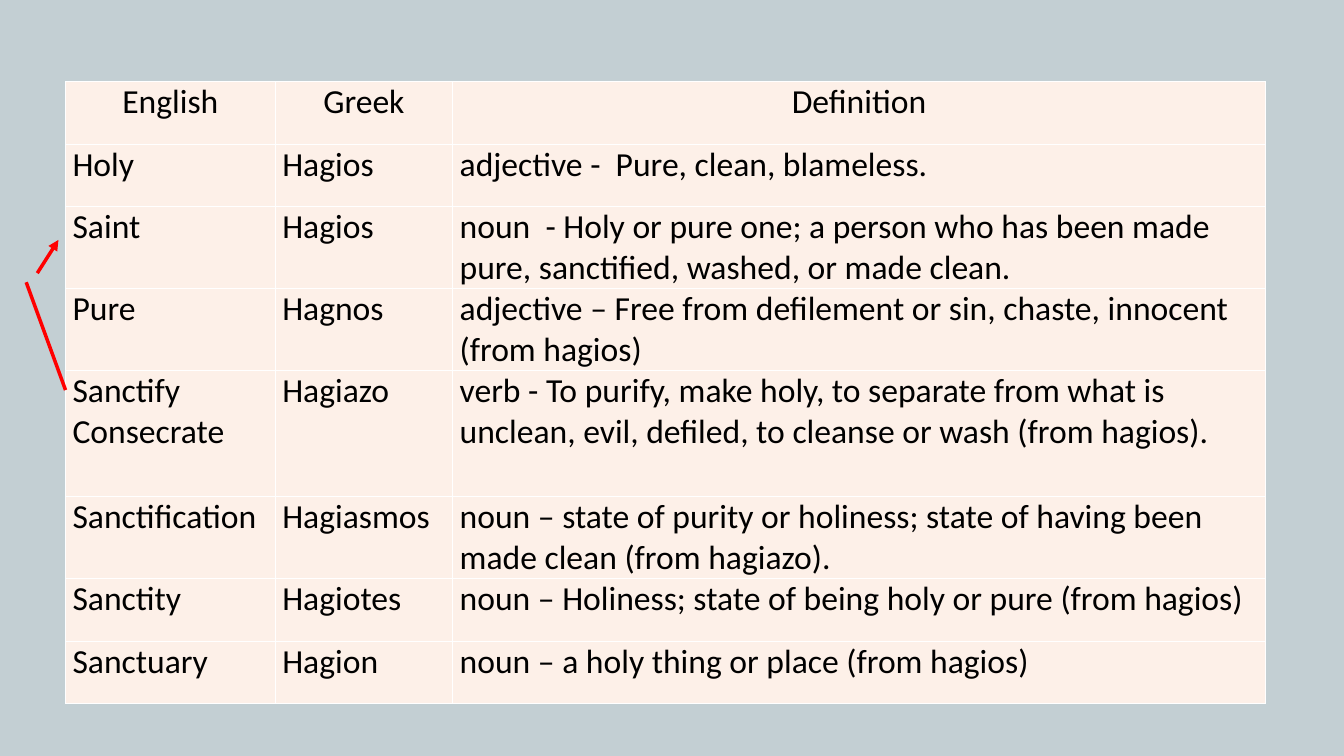
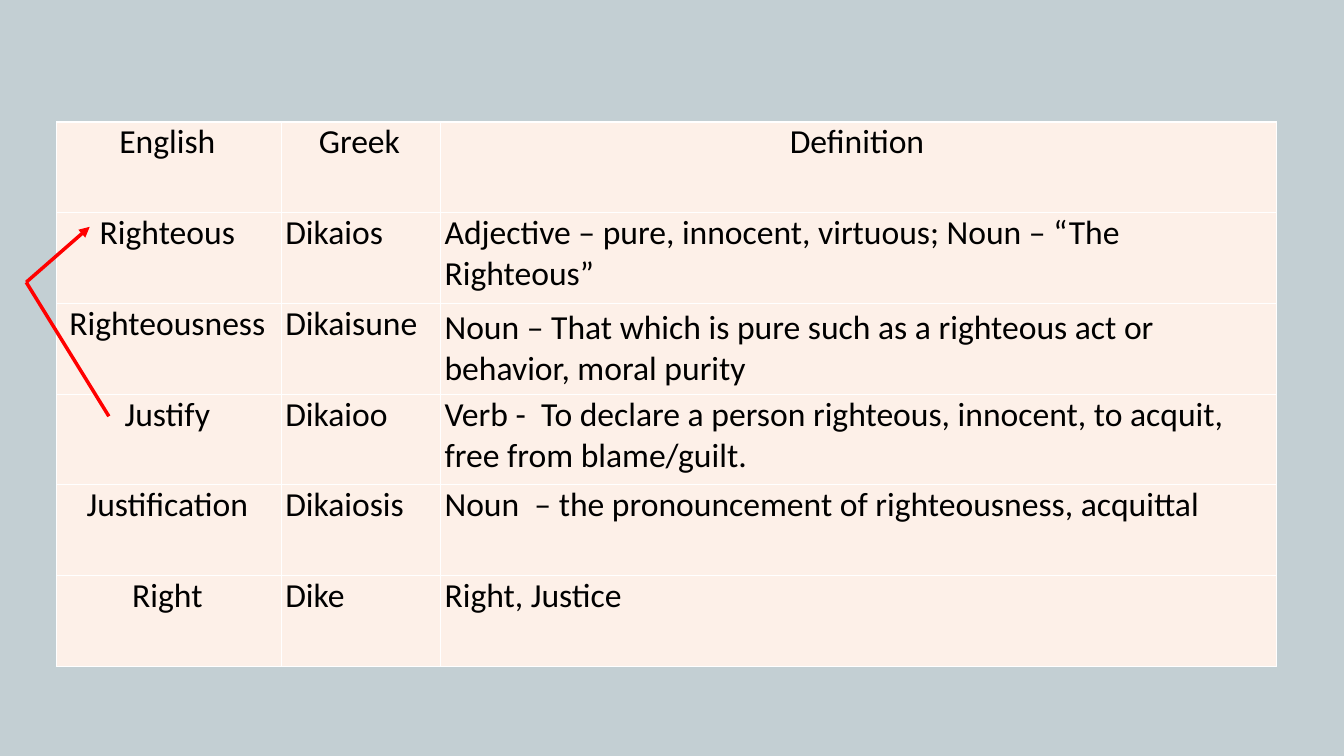
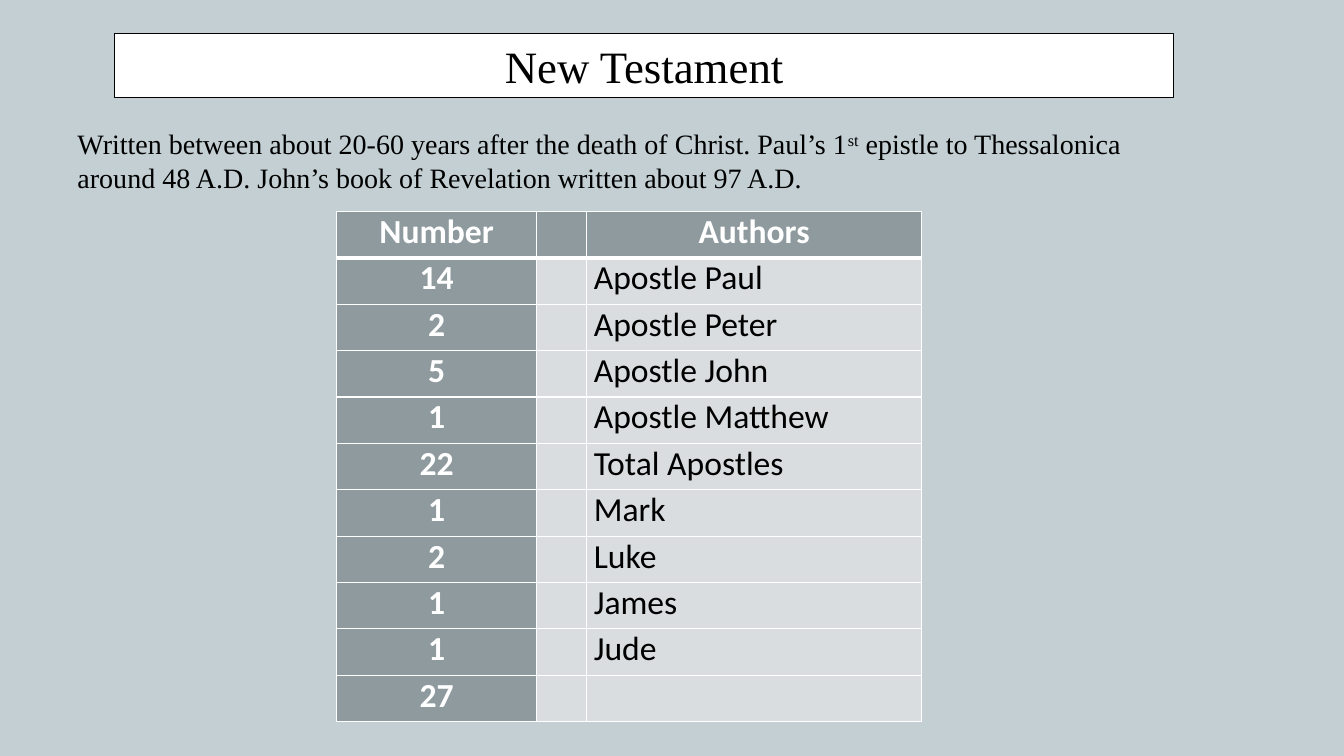
import lxml.etree
import pptx
import pptx.dml.color
import pptx.enum.shapes
import pptx.enum.text
import pptx.oxml.ns
import pptx.util

SCALE = 9144  # EMU in one px, 100 px to the inch
COLORS = {
    "back": "C3CFD3", "cream": "FDF0E8", "slate": "8E9A9E", "pale": "D9DDDF",
    "white": "FFFFFF", "black": "000000", "red": "FF0000",
}
ALIGN = {"l": pptx.enum.text.PP_ALIGN.LEFT, "c": pptx.enum.text.PP_ALIGN.CENTER}
MIDDLE = pptx.enum.text.MSO_ANCHOR.MIDDLE
SERIF = "Times New Roman"


def px(size):
    return pptx.util.Emu(size * SCALE)


def paint(fill, color):
    fill.solid()
    fill.fore_color.rgb = pptx.dml.color.RGBColor.from_string(COLORS[color])


def add_tag(parent, name, **attrs):
    return lxml.etree.SubElement(parent, pptx.oxml.ns.qn(name), attrs)


def write(frame, text, size=24, font="Calibri", color="black", bold=False, align="l"):
    """Fill a frame; a newline parts paragraphs, ^marks^ raise a run."""
    frame.word_wrap = True
    for row, line in enumerate(text.split("\n")):
        para = frame.add_paragraph() if row else frame.paragraphs[0]
        para.alignment = ALIGN[align]
        for place, part in enumerate(line.split("^")):
            run = para.add_run()
            run.text = part
            run.font.size = pptx.util.Pt(size)
            run.font.name = font
            run.font.bold = bold
            paint(run.font.fill, color)
            if place % 2:
                run._r.get_or_add_rPr().set("baseline", "30000")


class Deck:
    def __init__(self):
        self.file = pptx.Presentation()
        self.file.slide_width = px(1333)
        self.file.slide_height = px(750)
        self.slide = None

    def page(self):
        self.slide = self.file.slides.add_slide(self.file.slide_layouts[6])
        paint(self.slide.background.fill, "back")

    def title(self, text, *box):
        kind = pptx.enum.shapes.MSO_SHAPE.RECTANGLE
        shape = self.slide.shapes.add_shape(kind, *map(px, box))
        shape.shadow.inherit = False
        paint(shape.fill, "white")
        paint(shape.line.fill, "black")
        shape.line.width = pptx.util.Pt(0.75)
        write(shape.text_frame, text, size=32, font=SERIF, align="c")

    def text(self, text, *box, **style):
        shape = self.slide.shapes.add_textbox(*map(px, box))
        write(shape.text_frame, text, **style)

    def line(self, start, end, arrow=False):
        kind = pptx.enum.shapes.MSO_CONNECTOR.STRAIGHT
        line = self.slide.shapes.add_connector(kind, *map(px, start + end))
        paint(line.line.fill, "red")
        line.line.width = pptx.util.Pt(2.5)
        if arrow:
            add_tag(line.line._get_or_add_ln(), "a:tailEnd", type="triangle")
        add_tag(line._element.spPr, "a:effectLst")

    def edge(self, cell, **widths):
        """Draw the white borders; widths in points by side."""
        props = cell._tc.get_or_add_tcPr()
        for side in "LRTB":
            width = pptx.util.Pt(widths.get(side, 1))
            line = add_tag(props, "a:ln" + side, w=str(width))
            fill = add_tag(line, "a:solidFill")
            add_tag(fill, "a:srgbClr", val=COLORS["white"])

    def table(self, rows, left, top, cols, heights, aligns="lll", inset=7, dark=False):
        """Draw rows under a centred head; dark marks the head and first column."""
        frame = self.slide.shapes.add_table(
            len(rows), len(cols), *map(px, (left, top, sum(cols), sum(heights))))
        table = frame.table
        table.first_row = table.horz_banding = False
        for col, width in zip(table.columns, cols):
            col.width = px(width)
        for row, height in zip(table.rows, heights):
            row.height = px(height)
        for y, row in enumerate(rows):
            for x, text in enumerate(row):
                cell = table.cell(y, x)
                strong = dark and 0 in (x, y)
                cell.margin_left, cell.margin_right = px(inset), px(7)
                cell.margin_top = cell.margin_bottom = 0
                thick = {0: {"B": 3}, 1: {"T": 3}}.get(y, {}) if dark else {}
                self.edge(cell, **thick)
                paint(cell.fill, "slate" if strong else "pale" if dark else "cream")
                if text:
                    write(cell.text_frame, text, bold=strong,
                          color="white" if strong else "black",
                          align=aligns[x] if y else "c")
        return table


HEAD = ("English", "Greek", "Definition")
HOLY = [
    HEAD,
    ("Holy", "Hagios", "adjective -  Pure, clean, blameless."),
    ("Saint", "Hagios", "noun  - Holy or pure one; a person who has been made pure, "
     "sanctified, washed, or made clean."),
    ("Pure", "Hagnos", "adjective – Free from defilement or sin, chaste, innocent "
     "(from hagios)"),
    ("Sanctify\nConsecrate", "Hagiazo", "verb - To purify, make holy, to separate from "
     "what is unclean, evil, defiled, to cleanse or wash (from hagios)."),
    ("Sanctification", "Hagiasmos", "noun – state of purity or holiness; state of "
     "having been made clean (from hagiazo)."),
    ("Sanctity", "Hagiotes", "noun – Holiness; state of being holy or pure (from hagios)"),
    ("Sanctuary", "Hagion", "noun – a holy thing or place (from hagios)"),
]
RIGHT = [
    HEAD,
    ("Righteous", "Dikaios", "Adjective – pure, innocent, virtuous; Noun – “The Righteous”"),
    ("Righteousness", "Dikaisune", "Noun – That which is pure such as a righteous act "
     "or behavior, moral purity"),
    ("Justify", "Dikaioo", "Verb -  To declare a person righteous, innocent, to acquit, "
     "free from blame/guilt."),
    ("Justification", "Dikaiosis", "Noun  – the pronouncement of righteousness, acquittal"),
    ("Right", "Dike", "Right, Justice"),
]
BOOKS = [
    ("Number", "", "Authors"),
    ("14", "", "Apostle Paul"),
    ("2", "", "Apostle Peter"),
    ("5", "", "Apostle John"),
    ("1", "", "Apostle Matthew"),
    ("22", "", "Total Apostles"),
    ("1", "", "Mark"),
    ("2", "", "Luke"),
    ("1", "", "James"),
    ("1", "", "Jude"),
    ("27", "", ""),
]


def main():
    deck = Deck()

    deck.page()
    deck.table(HOLY, 65, 81, (208, 176, 806), [62] * 4 + [125] + [62] * 3)
    deck.line((26, 280), (65, 387))
    deck.line((37, 271), (58, 238), arrow=True)

    deck.page()
    table = deck.table(RIGHT, 56, 121, (223, 158, 829), [90] * 6, aligns="cll", inset=4)
    table.cell(2, 2).vertical_anchor = MIDDLE
    deck.line((26, 280), (108, 413))
    deck.line((26, 280), (89, 225), arrow=True)

    deck.page()
    deck.title("New Testament", 114, 33, 1050, 64)
    deck.text("Written between about 20-60 years after the death of Christ. Paul’s 1^st^ "
              "epistle to Thessalonica around 48 A.D. John’s book of Revelation written "
              "about 97 A.D.", 67, 121, 1115, 77, size=20, font=SERIF)
    deck.table(BOOKS, 334, 210, (198, 50, 332), [46] * 11, aligns="ccl", dark=True)

    deck.file.save("out.pptx")


if __name__ == "__main__":
    main()
